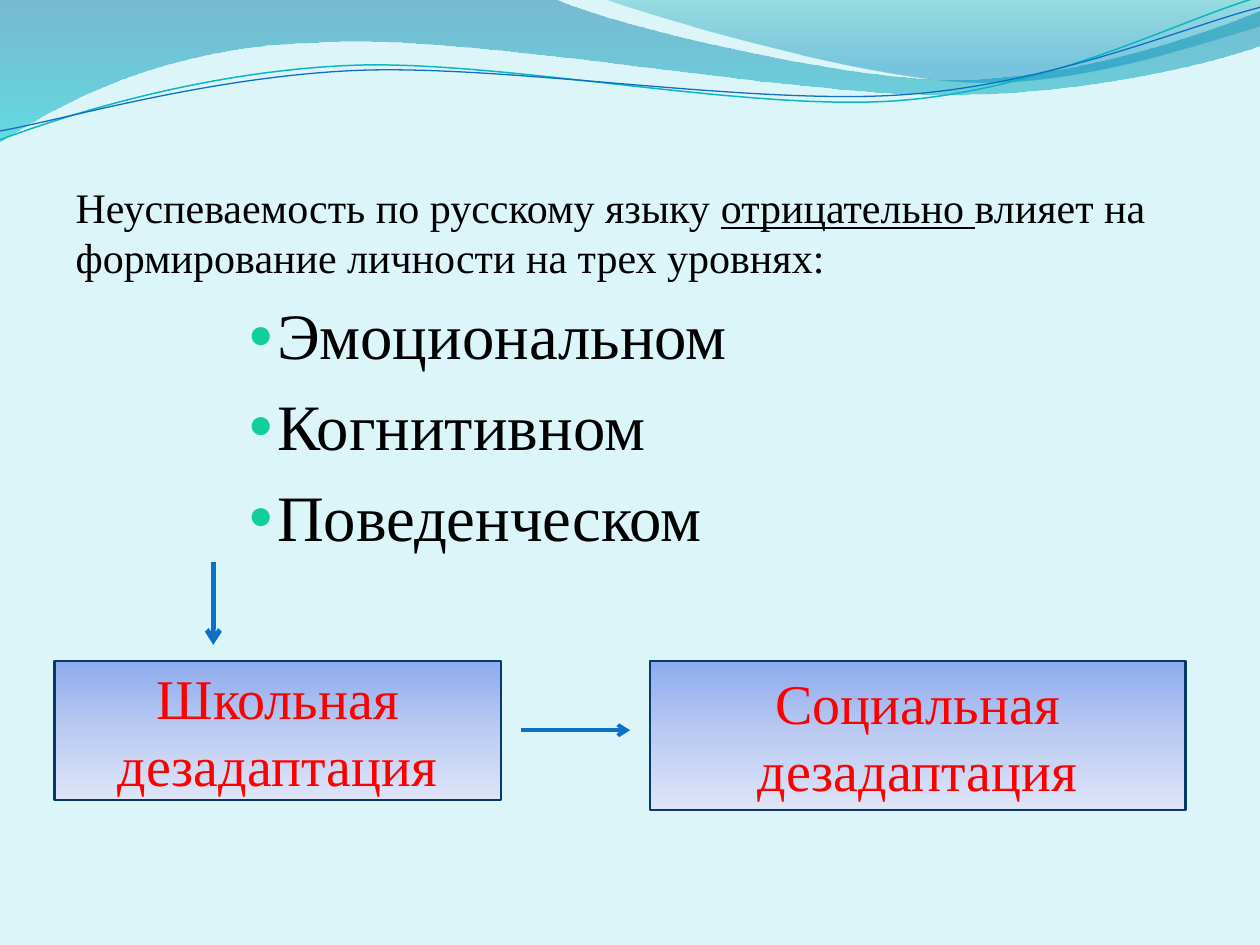
from dataclasses import dataclass

from lxml.etree import SubElement
from pptx import Presentation
from pptx.dml.color import RGBColor
from pptx.enum.shapes import MSO_CONNECTOR as Connector, MSO_SHAPE as Shape
from pptx.enum.text import MSO_ANCHOR as Anchor, MSO_AUTO_SIZE as AutoSize, PP_ALIGN as Align
from pptx.oxml.ns import qn
from pptx.util import Cm, Pt


@dataclass(frozen=True)
class Theme:
    font: str = "Times New Roman"
    background: str = "DBF5F9"
    text: str = "000000"
    bullet: str = "10CF9B"
    result: str = "FF0000"
    arrow: str = "0F6FC6"
    teal: str = "0AB8BF"
    border: str = "083A67"
    box_fill: tuple = ((0, "8EABEE", 100), (50, "BBCBF2", 100), (100, "DEE5F8", 100))
    wide_wave: tuple = ((0, "0074A1", 45), (100, "00C6CF", 55))
    right_wave: tuple = ((0, "00A1A9", 30), (80, "008BBF", 45))
    intro_size: float = 24
    level_size: float = 37
    result_size: float = 32


class SlideBuilder:
    def __init__(self, slide, theme):
        self.slide = slide
        self.theme = theme
        slide.background.fill.solid()
        slide.background.fill.fore_color.rgb = RGBColor.from_string(theme.background)

    def gradient(self, shape, stops):
        shape.fill.gradient()
        shape.fill.gradient_angle = 270
        stop_list = shape.fill._fill._gradFill.find(qn("a:gsLst"))
        for old_stop in list(stop_list):
            stop_list.remove(old_stop)
        for position, color, opacity in stops:
            stop = SubElement(stop_list, qn("a:gs"), pos=str(position * 1000))
            rgb = SubElement(stop, qn("a:srgbClr"), val=color)
            if opacity < 100:
                SubElement(rgb, qn("a:alpha"), val=str(opacity * 1000))

    def outline(self, shape, color, width):
        shape.line.color.rgb = RGBColor.from_string(color)
        shape.line.width = Pt(width)

    def run(self, paragraph, text, size, color, underline=None):
        run = paragraph.add_run()
        run.text = text
        run.font.name = self.theme.font
        run.font.size = Pt(size)
        run.font.color.rgb = RGBColor.from_string(color)
        run.font.underline = underline

    def curve(self, start, segments, closed):
        builder = self.slide.shapes.build_freeform(*map(Cm, start), scale=1.0)
        builder.add_line_segments([tuple(map(Cm, part[-2:])) for part in segments], close=closed)
        shape = builder.convert_to_shape()
        shape.shadow.inherit = False
        edges = list(shape._element.iter(qn("a:lnTo")))
        for edge, segment in zip(edges, segments):
            if len(segment) == 2:
                continue
            edge.tag = qn("a:cubicBezTo")
            end = edge[0]
            for x, y in (segment[:2], segment[2:4]):
                handle = SubElement(edge, qn("a:pt"))
                handle.set("x", str(Cm(x) - shape.left))
                handle.set("y", str(Cm(y) - shape.top))
            edge.append(end)
        return shape

    def wave(self, start, segments, stops):
        wave = self.curve(start, segments, True)
        self.gradient(wave, stops)
        wave.line.fill.background()

    def wave_line(self, start, segments, color, width):
        line = self.curve(start, segments, False)
        line.fill.background()
        self.outline(line, color, width)

    def indent(self, paragraph, left, first):
        properties = paragraph._p.get_or_add_pPr()
        properties.set("marL", str(Cm(left)))
        properties.set("indent", str(Cm(first)))
        return properties

    def body(self, left, top, width, height, intro, levels):
        body = self.slide.placeholders[1]
        body.left, body.top, body.width, body.height = map(Cm, (left, top, width, height))
        frame = body.text_frame
        frame.auto_size = AutoSize.NONE
        opening = frame.paragraphs[0]
        SubElement(self.indent(opening, 0, 0), qn("a:buNone"))
        for text, underline in intro:
            self.run(opening, text, self.theme.intro_size, self.theme.text, underline)
        for level in levels:
            paragraph = frame.add_paragraph()
            paragraph.level = 4
            properties = self.indent(paragraph, 4.06, -0.58)
            bullet_color = SubElement(properties, qn("a:buClr"))
            SubElement(bullet_color, qn("a:srgbClr"), val=self.theme.bullet)
            SubElement(properties, qn("a:buSzPct"), val="65000")
            SubElement(properties, qn("a:buFont"), typeface=self.theme.font)
            SubElement(properties, qn("a:buChar"), char="●")
            self.run(paragraph, level, self.theme.level_size, self.theme.text)

    def box(self, left, top, width, height, text):
        box = self.slide.shapes.add_shape(Shape.RECTANGLE, *map(Cm, (left, top, width, height)))
        box.shadow.inherit = False
        self.gradient(box, self.theme.box_fill)
        self.outline(box, self.theme.border, 1.25)
        frame = box.text_frame
        frame.word_wrap = True
        frame.vertical_anchor = Anchor.MIDDLE
        frame.paragraphs[0].alignment = Align.CENTER
        self.run(frame.paragraphs[0], text, self.theme.result_size, self.theme.result)

    def arrow(self, x1, y1, x2, y2, width):
        arrow = self.slide.shapes.add_connector(Connector.STRAIGHT, *map(Cm, (x1, y1, x2, y2)))
        self.outline(arrow, self.theme.arrow, width)
        SubElement(arrow.line._get_or_add_ln(), qn("a:tailEnd"), type="arrow")
        SubElement(arrow._element.spPr, qn("a:effectLst"))


def main():
    theme = Theme()
    presentation = Presentation()
    presentation.slide_width, presentation.slide_height = Cm(25.4), Cm(19.05)
    slide = presentation.slides.add_slide(presentation.slide_layouts[1])
    title = slide.shapes.title._element
    title.getparent().remove(title)
    builder = SlideBuilder(slide, theme)

    builder.wave((0, 0), [
        (11.18, -0.02),
        (12.09, 0.43, 16.87, 1.6, 19.25, 1.6),
        (21.67, 1.6, 24.33, 0.66, 25.4, 0.23),
        (25.43, 0.91),
        (24.97, 1.12, 22.1, 1.93, 18.95, 1.91),
        (15.8, 1.91, 9.7, 0.71, 6.53, 0.86),
        (3.28, 0.91, 1.17, 2.11, -0.02, 2.87),
    ], theme.wide_wave)
    builder.wave((12.17, -0.02), [
        (12.93, 0.28, 17.32, 1.57, 19.53, 1.65),
        (21.74, 1.75, 24.41, 0.81, 25.4, 0.53),
        (25.4, 0),
    ], theme.right_wave)
    builder.wave_line((0, 2.82), [
        (1.22, 2.36, 4.01, 1.45, 7.04, 1.32),
        (10.03, 1.19, 15.06, 2.26, 18.11, 2.03),
        (21.16, 1.8, 23.83, 0.38, 25.35, -0.05),
    ], theme.teal, 0.85)
    builder.wave_line((0, 2.64), [
        (1.19, 2.44, 4.17, 1.55, 7.19, 1.42),
        (10.24, 1.3, 15.16, 2.13, 18.21, 1.91),
        (21.23, 1.7, 23.9, 0.53, 25.4, 0.15),
    ], theme.arrow, 0.75)

    builder.body(1.27, 3.53, 22.86, 7.8, [
        ("Неуспеваемость по русскому языку ", None),
        ("отрицательно ", True),
        ("влияет на формирование личности на трех уровнях:", None),
    ], ["Эмоциональном", "Когнитивном", "Поведенческом"])

    builder.arrow(4.3, 11.33, 4.3, 13, 2.75)
    builder.box(1.1, 13.33, 9, 2.8, "Школьная дезадаптация")
    builder.box(13.1, 13.33, 10.8, 3, "Социальная дезадаптация")
    builder.arrow(10.5, 14.72, 12.7, 14.72, 2.25)

    presentation.save("out.pptx")


if __name__ == "__main__":
    main()
